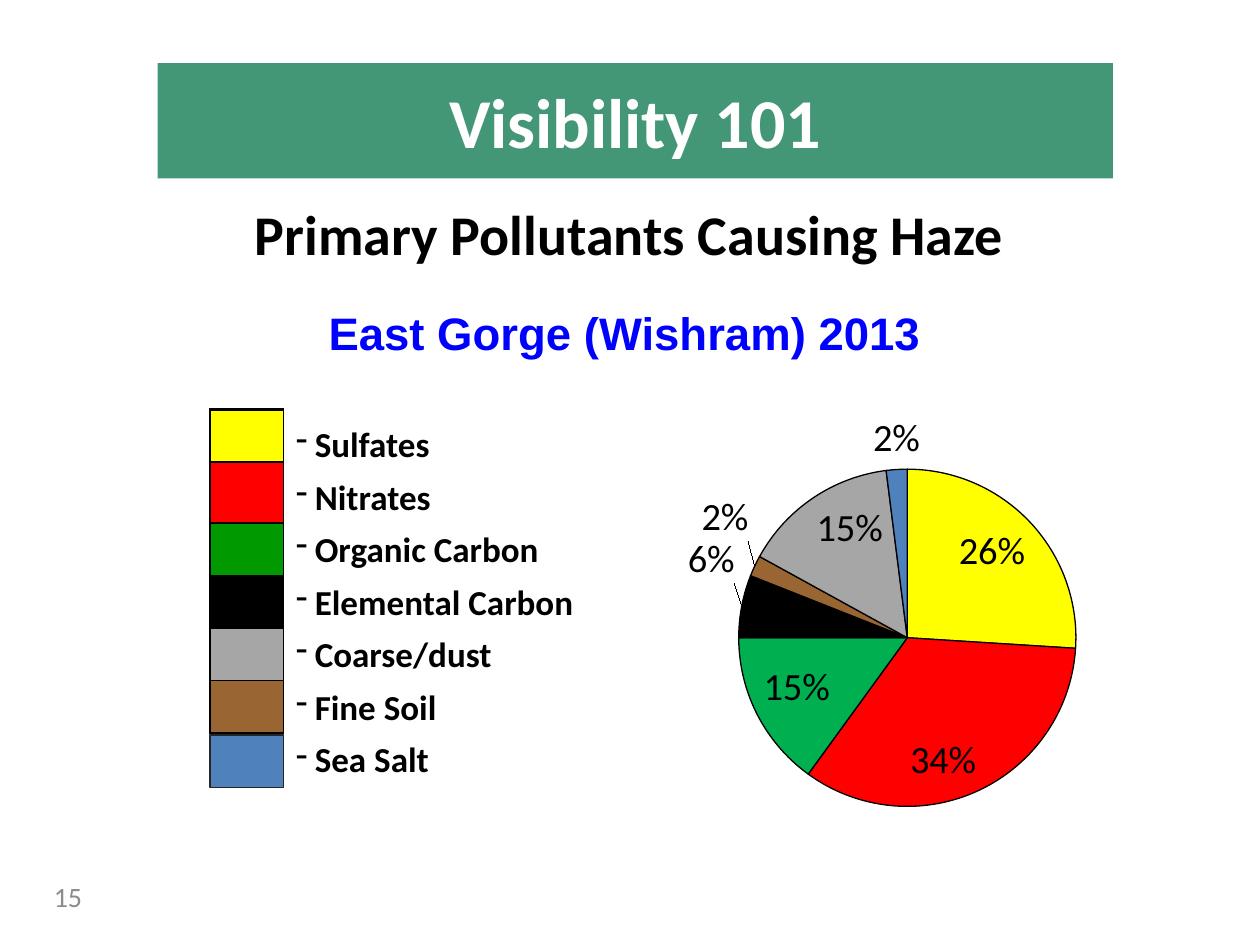
from lxml import etree
from pptx import Presentation, util as u
from pptx.chart.data import CategoryChartData
from pptx.dml.color import RGBColor
from pptx.enum import chart as ch, shapes, text
from pptx.oxml import parse_xml
from pptx.oxml.ns import nsdecls, qn

WHITE = RGBColor(0xFF, 0xFF, 0xFF)
BLACK = RGBColor(0x00, 0x00, 0x00)
BANNER_GREEN = RGBColor(0x43, 0x97, 0x77)
SITE_BLUE = RGBColor(0x00, 0x00, 0xFF)
NUMBER_GRAY = RGBColor(0x8C, 0x8C, 0x8C)
SALT_LINE = RGBColor(0x26, 0x26, 0x26)
YELLOW = RGBColor(0xFF, 0xFF, 0x00)
RED = RGBColor(0xFF, 0x00, 0x00)
LEGEND_GREEN = RGBColor(0x00, 0x99, 0x00)
PIE_GREEN = RGBColor(0x00, 0xB0, 0x50)
GRAY = RGBColor(0xA6, 0xA6, 0xA6)
BROWN = RGBColor(0x99, 0x66, 0x33)
SALT_BLUE = RGBColor(0x4F, 0x81, 0xBD)

WIDTH, HEIGHT = u.Inches(10), u.Inches(7.5)
UNIT = WIDTH / 120

POLLUTANTS = ["Sulfates", "Nitrates", "Organic Carbon", "Elemental Carbon",
              "Coarse/dust", "Fine Soil", "Sea Salt"]
SWATCHES = [YELLOW, RED, LEGEND_GREEN, BLACK, GRAY, BROWN]
SWATCH_ROWS = [5, 5.8, 5, 5, 5, 5]
SHARES = [26, 34, 15, 6, 2, 15, 2]
SLICES = [YELLOW, RED, PIE_GREEN, BLACK, BROWN, GRAY, SALT_BLUE]
OUTSIDE_LABELS = {3: (0, -0.05), 4: (0, -0.05), 6: (0, 0)}


def grid(*lengths):
    """Turn columns and rows of the 120 by 90 slide grid into lengths."""
    return [u.Emu(round(length * UNIT)) for length in lengths]


def style(font, size, color, bold=False, name="Calibri"):
    """Give a font its face, size, weight and colour."""
    font.name, font.size, font.bold = name, u.Pt(size), bold
    font.color.rgb = color


def add_banner(slide, box):
    """Place the slide title as a green banner."""
    banner = slide.shapes.title
    banner.left, banner.top, banner.width, banner.height = grid(*box)
    banner.fill.solid()
    banner.fill.fore_color.rgb = BANNER_GREEN
    frame = banner.text_frame
    frame.text = "Visibility 101"
    frame.vertical_anchor = text.MSO_ANCHOR.MIDDLE
    frame.paragraphs[0].alignment = text.PP_ALIGN.CENTER
    style(frame.paragraphs[0].font, 40, WHITE, True)


def add_line(slide, box, words, align, size, color, bold=False, name="Calibri",
             wrap=True, anchor=text.MSO_ANCHOR.TOP):
    """Place one line of text and return its box."""
    line = slide.shapes.add_textbox(*grid(*box))
    frame = line.text_frame
    frame.word_wrap, frame.vertical_anchor = wrap, anchor
    frame.text = words
    frame.paragraphs[0].alignment = align
    style(frame.paragraphs[0].font, size, color, bold, name)
    return line


def add_pie(slide, box):
    """Place the pie of pollutant shares with percent labels."""
    data = CategoryChartData()
    data.categories = [str(i + 1) for i in range(len(SHARES))]
    data.add_series("Series 1", SHARES)
    pie = slide.shapes.add_chart(ch.XL_CHART_TYPE.PIE, *grid(*box), data).chart
    pie.has_legend = pie.has_title = False
    style(pie.font, 22, BLACK)
    plot = pie.plots[0]
    plot.vary_by_categories = False
    series = plot.series[0]
    labels = series.data_labels
    labels.show_percentage, labels.show_value = True, False
    labels.position = ch.XL_LABEL_POSITION.INSIDE_END
    style(labels.font, 22, BLACK)
    for i, color in enumerate(SLICES):
        wedge = series.points[i].format
        wedge.fill.solid()
        wedge.fill.fore_color.rgb = color
        wedge.line.color.rgb, wedge.line.width = BLACK, u.Pt(0.75)
    for i in OUTSIDE_LABELS:
        label = series.points[i].data_label
        style(label.font, 22, BLACK)
        label.position = ch.XL_LABEL_POSITION.OUTSIDE_END
    for label in labels._element.findall(qn("c:dLbl")):
        index = label.find(qn("c:idx"))
        dx, dy = OUTSIDE_LABELS[int(index.get("val"))]
        label.find(qn("c:showVal")).set("val", "0")
        label.find(qn("c:showPercent")).set("val", "1")
        index.addnext(manual_layout(x=dx, y=dy))
    area = pie._chartSpace.chart.plotArea
    for layout in area.findall(qn("c:layout")):
        area.remove(layout)
    area.insert(0, manual_layout(layoutTarget="inner", xMode="edge", yMode="edge",
                                 x=0.32, y=0.16, w=0.44, h=0.79))


def manual_layout(**settings):
    """Build a chart layout element from its settings."""
    body = "".join(f'<c:{key} val="{value}"/>' for key, value in settings.items())
    return parse_xml(f'<c:layout {nsdecls("c")}><c:manualLayout>{body}'
                     "</c:manualLayout></c:layout>")


def add_names(slide, box):
    """Place the dashed list of pollutant names."""
    frame = slide.shapes.add_textbox(*grid(*box)).text_frame
    frame.word_wrap = True
    frame.vertical_anchor = text.MSO_ANCHOR.MIDDLE
    frame.text = "\n".join(POLLUTANTS)
    indent = u.Inches(0.15)
    for i, name in enumerate(frame.paragraphs):
        props = name._p.get_or_add_pPr()
        props.set("marL", str(indent))
        props.set("indent", str(-indent))
        etree.SubElement(props, qn("a:buChar"), char="-")
        name.space_before = u.Pt(6 if i else 0)
        style(name.font, 20, BLACK, True)


def add_swatches(slide, box):
    """Place the colour keys: a one-column table with the sea salt key below."""
    left, top, width, height = box
    keys = slide.shapes.add_table(len(SWATCHES), 1,
                                  *grid(left, top, width, sum(SWATCH_ROWS))).table
    keys.first_row = keys.horz_banding = False
    for i, (color, rows) in enumerate(zip(SWATCHES, SWATCH_ROWS)):
        keys.rows[i].height = grid(rows)[0]
        cell = keys.cell(i, 0)
        cell.margin_top = cell.margin_bottom = 0
        cell.fill.solid()
        cell.fill.fore_color.rgb = color
        for order, side in enumerate("LRTB"):
            points = 1.5 if side == "T" and i == 0 else 1
            cell._tc.get_or_add_tcPr().insert(order, parse_xml(
                f'<a:ln{side} {nsdecls("a")} w="{u.Pt(points)}"><a:solidFill>'
                f'<a:srgbClr val="{BLACK}"/></a:solidFill></a:ln{side}>'))
    salt = slide.shapes.add_shape(shapes.MSO_SHAPE.RECTANGLE,
                                  *grid(left, top + height - 5, width, 5))
    salt.shadow.inherit = False
    salt.fill.solid()
    salt.fill.fore_color.rgb = SALT_BLUE
    salt.line.color.rgb, salt.line.width = SALT_LINE, u.Pt(1)


def main():
    """Build and save the slide."""
    deck = Presentation()
    deck.slide_width, deck.slide_height = WIDTH, HEIGHT
    slide = deck.slides.add_slide(deck.slide_layouts[5])
    center, right = text.PP_ALIGN.CENTER, text.PP_ALIGN.RIGHT
    site = add_line(slide, (23, 28.5, 73, 6.5), "East Gorge (Wishram) 2013",
                    center, 26, SITE_BLUE, True, "Arial")
    site.fill.solid()
    site.fill.fore_color.rgb = WHITE
    add_banner(slide, (15, 6, 91, 11))
    add_line(slide, (22.8, 18.4, 74.3, 7.7), "Primary Pollutants Causing Haze",
             center, 32, BLACK, True, wrap=False)
    add_line(slide, (1, 83, 8, 4.8), "15", right, 16, NUMBER_GRAY,
             anchor=text.MSO_ANCHOR.MIDDLE)
    add_pie(slide, (47, 38, 73, 41))
    add_names(slide, (27, 39.5, 33, 35.5))
    add_swatches(slide, (20, 39, 7, 36))
    deck.save("out.pptx")


if __name__ == "__main__":
    main()
